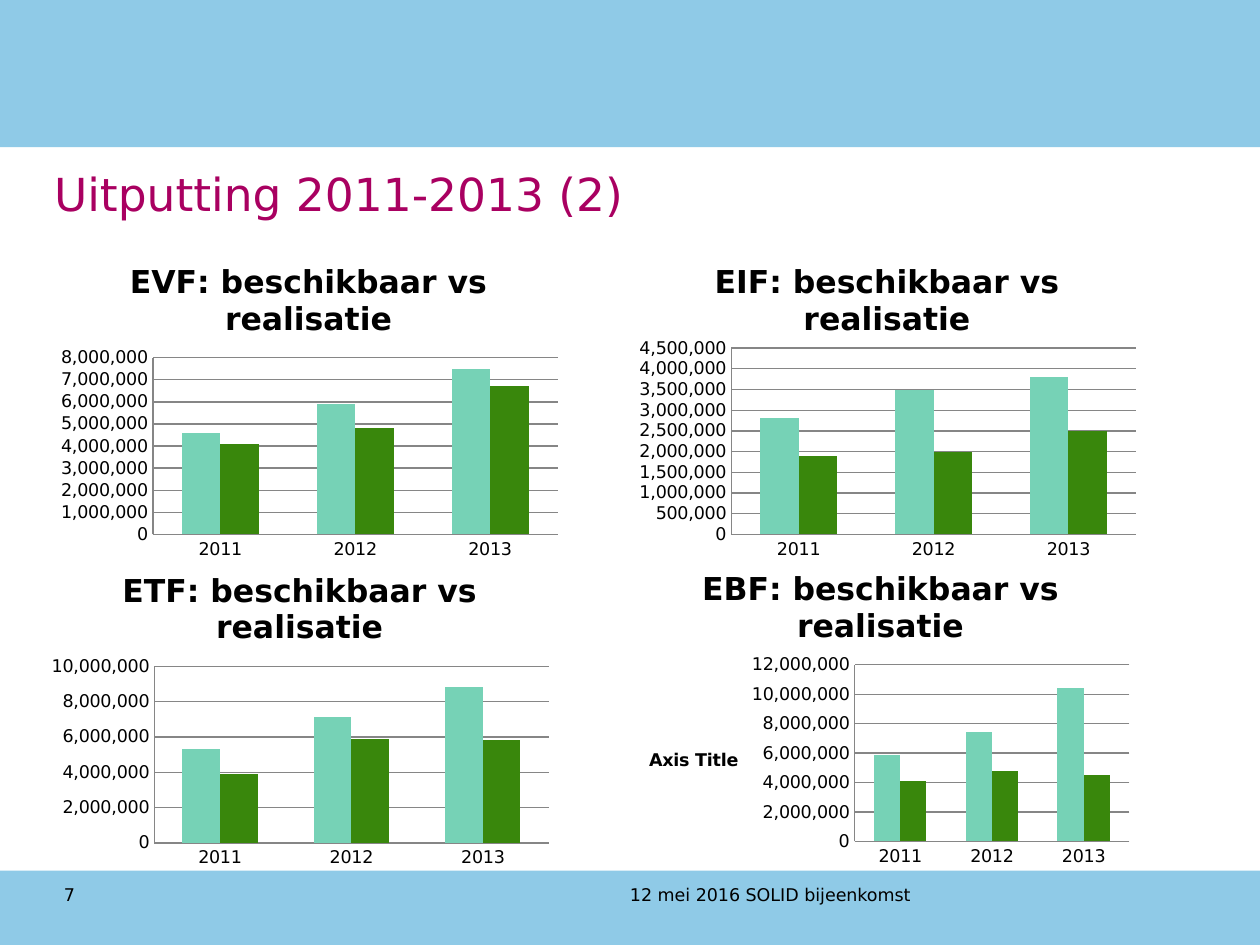
from lxml.etree import SubElement
from pptx import Presentation
from pptx.chart.data import CategoryChartData
from pptx.dml.color import RGBColor
from pptx.enum.chart import XL_CHART_TYPE, XL_TICK_MARK
from pptx.enum.shapes import MSO_SHAPE
from pptx.enum.text import MSO_ANCHOR
from pptx.oxml.ns import qn
from pptx.util import Cm, Pt

FONT = "DejaVu Sans"
BLUE, PURPLE, BLACK, GRAY = "8FCAE7", "A90061", "000000", "868686"
MINT, GREEN = "76D2B6", "39870C"
M = 1_000_000


def rgb(color):
    return RGBColor.from_string(color)


def write(tf, text, size=10, color=BLACK, bold=False):
    p = tf.paragraphs[0]
    r = p.add_run()
    r.text = text
    r.font.name = FONT
    r.font.size = Pt(size)
    r.font.bold = bold
    r.font.color.rgb = rgb(color)


prs = Presentation()
prs.slide_width, prs.slide_height = Cm(25.4), Cm(19.05)
slide = prs.slides.add_slide(prs.slide_layouts[6])

# Bands at the top and bottom
for top, height in ((0, 2.97), (17.55, 1.5)):
    sp = slide.shapes.add_shape(MSO_SHAPE.RECTANGLE, 0, Cm(top), prs.slide_width, Cm(height))
    sp.shadow.inherit = False
    sp.fill.solid()
    sp.fill.fore_color.rgb = rgb(BLUE)
    sp.line.fill.background()

# Title, footer and slide number
texts = [
    ("Uitputting 2011-2013 (2)", 0.84, 3.12, 22.86, 1.57, 26, PURPLE, MSO_ANCHOR.MIDDLE),
    ("12 mei 2016 SOLID bijeenkomst", 12.45, 17.7, 11.56, 0.99, 10, BLACK, MSO_ANCHOR.TOP),
    ("7", 1.04, 17.7, 1.98, 0.99, 10, BLACK, MSO_ANCHOR.TOP),
]
for text, x, y, w, h, size, color, anchor in texts:
    tf = slide.shapes.add_textbox(Cm(x), Cm(y), Cm(w), Cm(h)).text_frame
    tf.word_wrap = True
    tf.vertical_anchor = anchor
    write(tf, text, size=size, color=color)

# Fund, left, top, available, realised, axis maximum, axis step, plot area (x, y, w, h), axis title
charts = [
    ("EVF", 0.99, 4.88, (4.6, 5.9, 7.5), (4.1, 4.8, 6.7), 8, 1, (0.2, 0.36, 0.78, 0.55), None),
    ("EIF", 12.65, 4.88, (2.8, 3.5, 3.8), (1.9, 2, 2.5), 4.5, 0.5, (0.2, 0.33, 0.78, 0.58), None),
    ("ETF", 0.81, 11.1, (5.3, 7.1, 8.8), (3.9, 5.9, 5.8), 10, 2, (0.22, 0.36, 0.76, 0.55), None),
    ("EBF", 12.52, 11.07, (5.9, 7.4, 10.4), (4.1, 4.8, 4.5), 12, 2, (0.45, 0.36, 0.53, 0.55),
     "Axis Title"),
]
for fund, x, y, available, realised, top, step, plot_area, axis_title in charts:
    data = CategoryChartData(number_format="#,##0")
    data.categories = ["2011", "2012", "2013"]
    for name, values in (("Series 1", available), ("Series 2", realised)):
        data.add_series(name, [round(v * M) for v in values])
    chart = slide.shapes.add_chart(XL_CHART_TYPE.COLUMN_CLUSTERED, Cm(x), Cm(y),
                                   Cm(10.46), Cm(6.48), data).chart
    chart.has_legend = False
    chart.font.name = FONT
    chart.font.size = Pt(10)
    chart.font.color.rgb = rgb(BLACK)
    chart.has_title = True
    write(chart.chart_title.text_frame, f"{fund}: beschikbaar vs realisatie", size=18, bold=True)
    chart.chart_title.include_in_layout = False

    plot = chart.plots[0]
    plot.gap_width = 150
    plot.overlap = 0
    plot.vary_by_categories = False
    for series, color in zip(plot.series, (MINT, GREEN)):
        series.format.fill.solid()
        series.format.fill.fore_color.rgb = rgb(color)

    axis = chart.value_axis
    axis.minimum_scale, axis.maximum_scale = 0, top * M
    axis.major_unit = step * M
    axis.tick_labels.number_format = "#,##0"
    axis.tick_labels.number_format_is_linked = False
    axis.has_major_gridlines = True
    for line in (axis.major_gridlines.format.line, axis.format.line,
                 chart.category_axis.format.line):
        line.color.rgb = rgb(GRAY)
        line.width = Pt(0.75)
    for ax in (axis, chart.category_axis):
        ax.major_tick_mark = ax.minor_tick_mark = XL_TICK_MARK.NONE
    if axis_title:
        tf = axis.axis_title.text_frame
        write(tf, axis_title, bold=True)
        body = axis.axis_title._element.find(".//" + qn("a:bodyPr"))
        body.set("rot", "0")
        body.set("vert", "horz")

    # Fixed inner plot area, as fractions of the chart
    area = chart._chartSpace.chart.plotArea
    layout = area.find(qn("c:layout"))
    if layout is None:
        layout = SubElement(area, qn("c:layout"))
        area.insert(0, layout)
    manual = SubElement(layout, qn("c:manualLayout"))
    settings = [("layoutTarget", "inner"), ("xMode", "edge"), ("yMode", "edge"),
                *zip("xywh", plot_area)]
    for tag, value in settings:
        SubElement(manual, qn("c:" + tag)).set("val", str(value))

prs.save("out.pptx")
